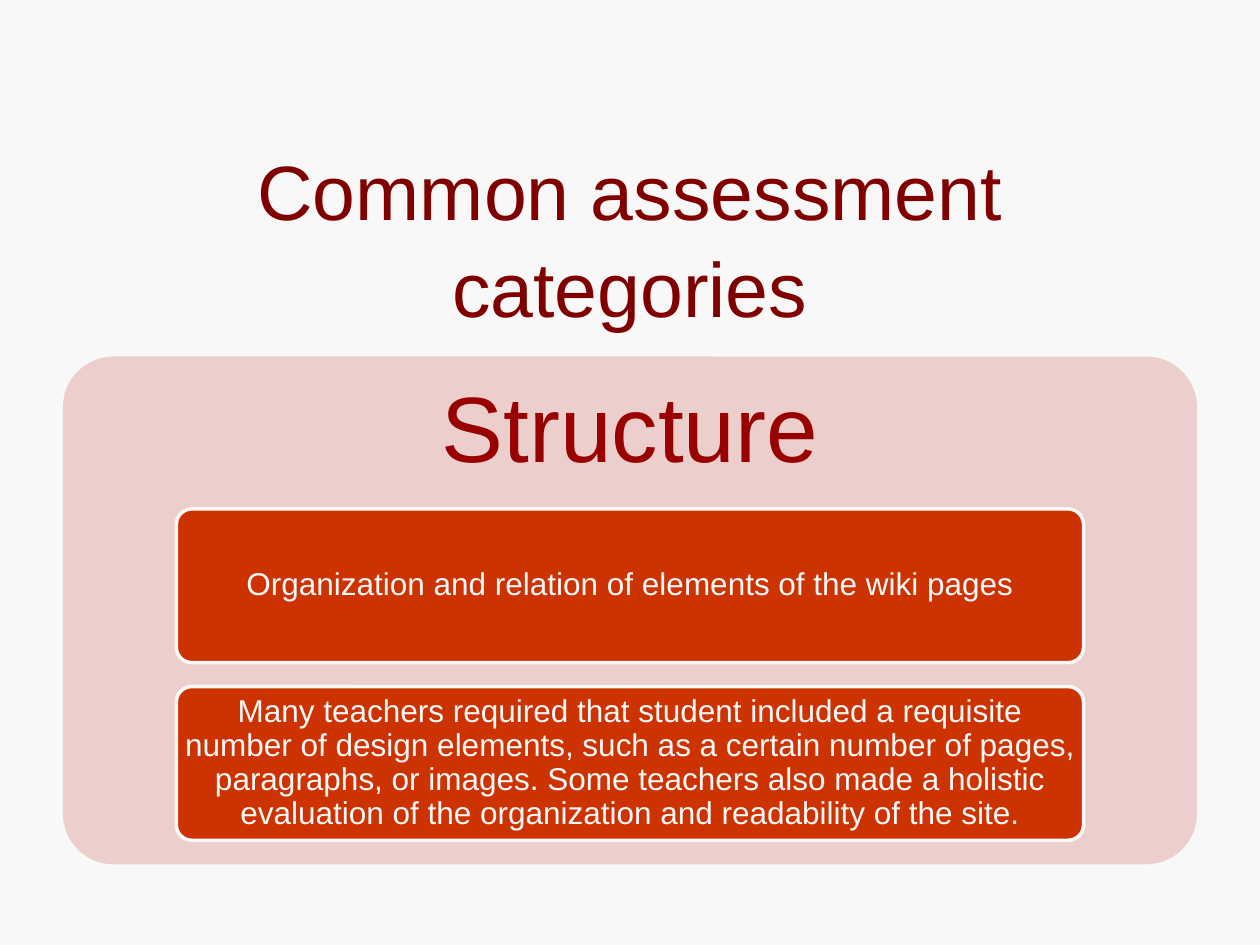
from pptx import Presentation
from pptx.dml.color import RGBColor
from pptx.enum.shapes import MSO_SHAPE as SHAPE
from pptx.enum.text import MSO_ANCHOR as ANCHOR, PP_ALIGN as ALIGN
from pptx.util import Inches, Pt

CARDS = [
    "Organization and relation of elements of the wiki pages",
    "Many teachers required that student included a requisite number of design "
    "elements, such as a certain number of pages, paragraphs, or images. Some "
    "teachers also made a holistic evaluation of the organization and "
    "readability of the site.",
]


def color(value):
    return RGBColor.from_string(value)


def set_text(s, text, size, hex_color, spacing, inset_x, inset_y):
    tf = s.text_frame
    tf.word_wrap = True
    tf.vertical_anchor = ANCHOR.MIDDLE
    tf.margin_left = tf.margin_right = Inches(inset_x)
    tf.margin_top = tf.margin_bottom = Inches(inset_y)
    tf.text = text
    p = tf.paragraphs[0]
    p.alignment = ALIGN.CENTER
    p.line_spacing = spacing
    font = p.runs[0].font
    font.name = "Arial"
    font.size = Pt(size)
    font.color.rgb = color(hex_color)


def add_round_box(slide, left, top, width, height, fill, line=None):
    s = slide.shapes.add_shape(SHAPE.ROUNDED_RECTANGLE, Inches(left), Inches(top),
                               Inches(width), Inches(height))
    s.adjustments[0] = 0.1
    s.shadow.inherit = False
    s.fill.solid()
    s.fill.fore_color.rgb = color(fill)
    if line:
        s.line.color.rgb = color(line)
        s.line.width = Pt(2)
    else:
        s.line.fill.background()
    return s


def add_heading(slide, left, top, width, height, text, size, hex_color, spacing, inset):
    s = slide.shapes.add_textbox(Inches(left), Inches(top), Inches(width), Inches(height))
    set_text(s, text, size, hex_color, spacing, inset, inset)


def add_panel(slide, left, top, width, height, heading, cards):
    add_round_box(slide, left, top, width, height, "ECCECC")
    head_height = 0.3 * height
    add_heading(slide, left, top, width, head_height, heading, 53, "990000", 0.9, 0.22)
    card_width, card_height, gap = 0.8 * width, 1.22, 0.19
    for i, text in enumerate(cards):
        s = add_round_box(slide, left + 0.1 * width,
                          top + head_height + i * (card_height + gap),
                          card_width, card_height, "CC3300", "F8F8F8")
        set_text(s, text, 18, "F8F8F8", 0.9, 0.01, 0.01)


def main():
    prs = Presentation()
    prs.slide_width, prs.slide_height = Inches(10), Inches(7.5)
    slide = prs.slides.add_slide(prs.slide_layouts[6])
    slide.background.fill.solid()
    slide.background.fill.fore_color.rgb = color("F8F8F8")
    add_heading(slide, 0.5, 1.25, 9, 1.25, "Common assessment categories",
                44, "800000", 1.05, 0.1)
    add_panel(slide, 0.5, 2.83, 9, 4.03, "Structure", CARDS)
    prs.save("out.pptx")


if __name__ == "__main__":
    main()
